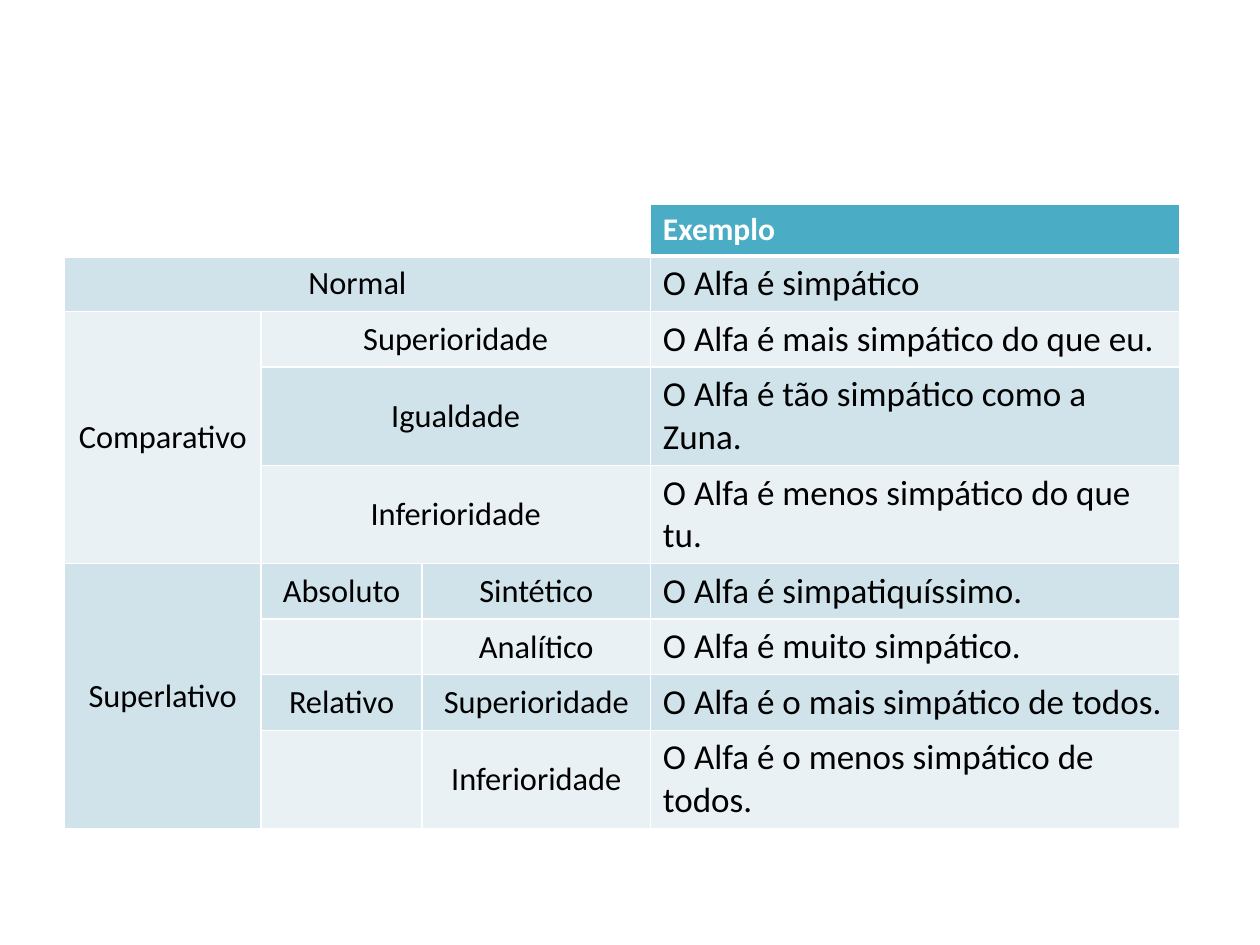
"""Build a slide with a table of the degrees of the adjective in Portuguese."""
import lxml.etree
import pptx
import pptx.dml.color
import pptx.enum.text
import pptx.oxml.ns
import pptx.util

Cm = pptx.util.Cm
ANCHOR = pptx.enum.text.MSO_ANCHOR
ALIGN = pptx.enum.text.PP_ALIGN
COLORS = {
    "header": "4BACC6",
    "dark_band": "D0E3EA",
    "light_band": "E9F1F5",
    "text": "000000",
    "white": "FFFFFF",
}
COLUMN_WIDTHS = [3.96, 3.25, 1.12, 3.48, 10.67]
ROW_HEIGHT = 1.04
EXAMPLES = [
    "O Alfa é simpático",
    "O Alfa é mais simpático do que eu.",
    "O Alfa é tão simpático como a Zuna.",
    "O Alfa é menos simpático do que tu.",
    "O Alfa é simpatiquíssimo.",
    "O Alfa é muito simpático.",
    "O Alfa é o mais simpático de todos.",
    "O Alfa é o menos simpático de todos.",
]
DEGREES = [
    (1, 0, 1, 4, "Normal"),
    (2, 0, 3, 1, "Comparativo"),
    (2, 1, 1, 3, "Superioridade"),
    (3, 1, 1, 3, "Igualdade"),
    (4, 1, 1, 3, "Inferioridade"),
    (5, 0, 4, 1, "Superlativo"),
    (5, 1, 1, 1, "Absoluto"),
    (5, 2, 1, 2, "Sintético"),
    (6, 2, 1, 2, "Analítico"),
    (7, 1, 1, 1, "Relativo"),
    (7, 2, 1, 2, "Superioridade"),
    (8, 2, 1, 2, "Inferioridade"),
]


def write_text(cell, text, size=18.5, color="text", bold=False,
               align=ALIGN.LEFT, anchor=ANCHOR.TOP):
    cell.vertical_anchor = anchor
    paragraph = cell.text_frame.paragraphs[0]
    paragraph.alignment = align
    run = paragraph.add_run()
    run.text = text
    run.font.name = "Calibri"
    run.font.size = pptx.util.Pt(size)
    run.font.bold = bold
    run.font.color.rgb = pptx.dml.color.RGBColor.from_string(COLORS[color])


class SlideBuilder:
    def __init__(self, presentation):
        self.slide = presentation.slides.add_slide(presentation.slide_layouts[6])

    def add_border(self, cell, side, width):
        qn = pptx.oxml.ns.qn
        properties = cell._tc.get_or_add_tcPr()
        line = lxml.etree.SubElement(
            properties, qn(f"a:ln{side}"), w=str(pptx.util.Pt(width)))
        fill = lxml.etree.SubElement(line, qn("a:solidFill"))
        lxml.etree.SubElement(fill, qn("a:srgbClr"), val=COLORS["white"])

    def style_cell(self, cell, row, color):
        widths = {"L": 1, "R": 1, "T": 3 if row == 1 else 1, "B": 3 if row == 0 else 1}
        for side, width in widths.items():
            self.add_border(cell, side, width)
        if color is None:
            cell.fill.background()
        else:
            cell.fill.solid()
            cell.fill.fore_color.rgb = pptx.dml.color.RGBColor.from_string(COLORS[color])

    def add_table(self, left, top, height):
        row_count = len(EXAMPLES) + 1
        last = len(COLUMN_WIDTHS) - 1
        shape = self.slide.shapes.add_table(
            row_count, len(COLUMN_WIDTHS), Cm(left), Cm(top),
            Cm(sum(COLUMN_WIDTHS)), Cm(height))
        table = shape.table
        for column, width in zip(table.columns, COLUMN_WIDTHS):
            column.width = Cm(width)
        for row in table.rows:
            row.height = Cm(ROW_HEIGHT)
        shape.height = Cm(height)
        for row in range(row_count):
            band = "dark_band" if row % 2 else "light_band"
            for column in range(last + 1):
                color = band if row else "header" if column == last else None
                self.style_cell(table.cell(row, column), row, color)
        return table


def main():
    presentation = pptx.Presentation()
    presentation.slide_width = Cm(25.4)
    presentation.slide_height = Cm(19.05)
    table = SlideBuilder(presentation).add_table(1.3, 4.12, 12.37)
    example_column = len(COLUMN_WIDTHS) - 1

    table.cell(0, 1).merge(table.cell(0, 2))
    write_text(table.cell(0, example_column), "Exemplo", size=18, color="white", bold=True)
    for row, example in enumerate(EXAMPLES, start=1):
        write_text(table.cell(row, example_column), example, size=20)
    for row, column, row_span, column_span, degree in DEGREES:
        cell = table.cell(row, column)
        if row_span * column_span > 1:
            cell.merge(table.cell(row + row_span - 1, column + column_span - 1))
        write_text(cell, degree, align=ALIGN.CENTER, anchor=ANCHOR.MIDDLE)

    presentation.save("out.pptx")


if __name__ == "__main__":
    main()
